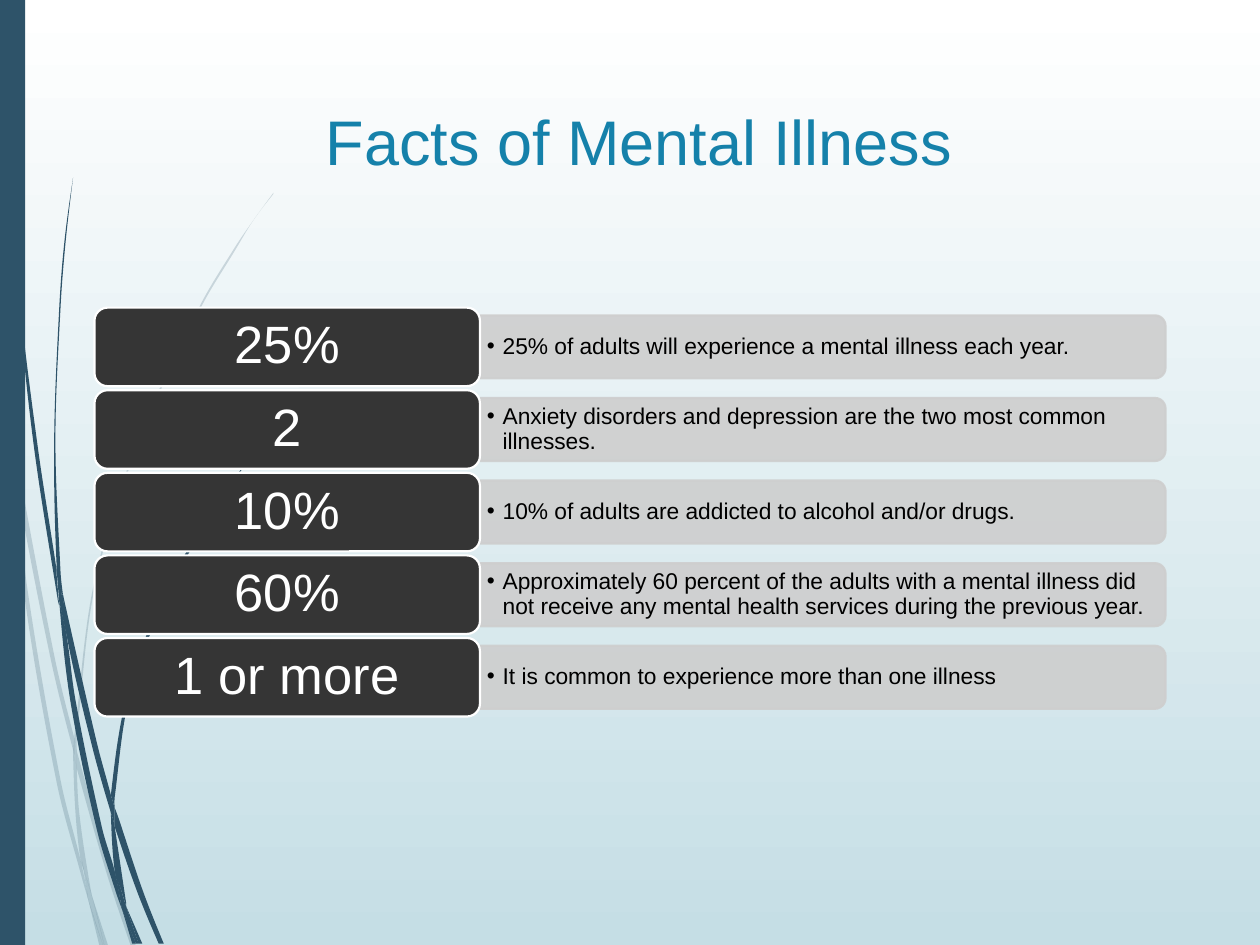
from math import dist
from lxml.etree import SubElement
from pptx import Presentation
from pptx.dml.color import RGBColor
from pptx.enum.shapes import MSO_SHAPE as Preset
from pptx.enum.text import MSO_ANCHOR as Anchor, PP_ALIGN as Align
from pptx.oxml.ns import qn
from pptx.util import Pt

TITLE = "Facts of Mental Illness"
FACTS = [
    ("25%", "25% of adults will experience a mental illness each year."),
    ("2", "Anxiety disorders and depression are the two most common illnesses."),
    ("10%", "10% of adults are addicted to alcohol and/or drugs."),
    ("60%", "Approximately 60 percent of the adults with a mental illness did "
            "not receive any mental health services during the previous year."),
    ("1 or more", "It is common to experience more than one illness"),
]

NAVY, TEAL, CHARCOAL, GREY = "2E5369", "1581AA", "353535", "CECECE"
WHITE, BLACK, MIST = "FFFFFF", "000000", "C5DEE5"
FONT = "Arial"

GRASS_UNIT = 0.72
PALE_GRASS = [
    [[(8, 350), (6, 322), (0, 282)], [(0, 299), (7, 344), (8, 350)]],
    [[(10, 345), (12, 376), (40, 522), (59, 599)], [(59, 586), (43, 520), (10, 345)]],
    [[(61, 610), (85, 694), (104, 751)], [(108, 751), (88, 692), (64, 607), (61, 596)]],
    [[(83, 751)], [(86, 751), (73, 711)]],
    [[(8, 350), (19, 470), (45, 621), (64, 693), (70, 714)],
     [(69, 707), (64, 683), (48, 619), (22, 469), (12, 376), (8, 350)]],
    [[(58, 599), (60, 646), (64, 683), (67, 692), (73, 711)],
     [(72, 706), (63, 646), (61, 610)], [(61, 608)]],
    [[(61, 596), (61, 584), (76, 462), (111, 349), (159, 245), (187, 198), (201, 175), (217, 154)],
     [(217, 153), (201, 175), (186, 197), (158, 244), (110, 348), (75, 461), (59, 584), (59, 586)]],
    [[(70, 714), (79, 751)], [(82, 751)]],
    [[(61, 608), (61, 610)], [(61, 596), (59, 586)], [(58, 599)]],
    [[(67, 692), (65, 683)], [(69, 707), (70, 714), (82, 751)], [(83, 751), (73, 711), (67, 692)]],
]
DARK_GRASS = [
    [[(2, 0), (3, 48), (5, 110), (14, 233), (27, 355), (46, 477), (47, 481)],
     [(45, 457), (45, 453), (30, 355), (15, 232), (6, 109), (4, 48), (3, 0)]],
    [[(50, 472), (53, 505), (73, 592), (88, 645)], [(88, 633), (88, 631), (77, 590), (50, 472)]],
    [[(91, 656), (109, 708), (126, 749)], [(130, 749), (113, 706), (94, 649), (91, 641)]],
    [[(47, 477), (56, 557), (77, 659), (92, 708), (97, 722)],
     [(96, 717), (91, 691), (81, 657), (60, 556), (53, 505), (47, 477)]],
    [[(50, 472), (48, 453), (44, 349), (48, 245), (52, 193), (58, 141)],
     [(58, 141), (51, 193), (47, 245), (43, 349), (45, 449), (49, 472)]],
    [[(110, 749)], [(113, 749), (100, 719)]],
    [[(47, 477), (53, 505)], [(50, 472), (49, 472)], [(45, 449), (45, 453)]],
    [[(91, 641), (91, 633), (103, 552), (131, 476), (169, 406), (191, 374), (203, 359), (216, 344)],
     [(215, 344), (203, 358), (191, 373), (168, 405), (129, 474), (101, 551), (88, 631)]],
    [[(97, 722), (105, 749)], [(108, 749)]],
    [[(88, 645), (91, 691), (96, 706), (100, 719)], [(100, 716), (91, 656)], [(90, 651)]],
    [[(88, 645), (90, 651), (91, 656)], [(91, 641), (88, 631)]],
    [[(96, 706), (91, 691)], [(96, 717), (97, 722), (108, 749)], [(110, 749), (100, 719), (96, 706)]],
]

TAG_LEFT, TAG_TOP, TAG_WIDTH, TAG_HEIGHT = 54, 175.8, 220.3, 44.9
ROW_PITCH = 47.2
BAR_WIDTH, BAR_HEIGHT = 391.7, 36
NOTE_WIDTH, NOTE_HEIGHT = 389.5, 32.4


def paint(color_format, value):
    color_format.rgb = RGBColor.from_string(value)


def style(shape, fill, line=None, opacity=100):
    shape.shadow.inherit = False
    shape.fill.solid()
    paint(shape.fill.fore_color, fill)
    if line:
        paint(shape.line.color, line)
        shape.line.width = Pt(1.25)
    else:
        shape.line.fill.background()
    if opacity < 100:
        for color in shape._element.spPr.iter(qn("a:srgbClr")):
            SubElement(color, qn("a:alpha"), val=str(opacity * 1000))


def write(box, text, size, color, align=Align.LEFT, anchor=Anchor.MIDDLE,
          insets=(7.2, 3.6), spacing=None, bullet_indent=None):
    frame = box.text_frame
    frame.word_wrap = True
    frame.vertical_anchor = anchor
    frame.margin_left = frame.margin_right = Pt(insets[0])
    frame.margin_top = frame.margin_bottom = Pt(insets[1])
    para = frame.paragraphs[0]
    para.alignment = align
    para.line_spacing = spacing
    if bullet_indent:
        properties = para._p.get_or_add_pPr()
        properties.set("marL", str(Pt(bullet_indent)))
        properties.set("indent", str(-Pt(bullet_indent)))
        SubElement(properties, qn("a:buFont"), typeface=FONT)
        SubElement(properties, qn("a:buChar"), char="•")
    span = para.add_run()
    span.text = text
    span.font.name = FONT
    span.font.size = Pt(size)
    paint(span.font.color, color)


def handle(knots, index, step):
    before, here, after = knots[index - step], knots[index], knots[index + step]
    reach = dist(here, after) / dist(before, after) / 3
    return tuple(h + (a - b) * reach for b, h, a in zip(before, here, after))


def halfway(start, end):
    return tuple((a + b) / 2 for a, b in zip(start, end))


def curve_handles(knots):
    last = len(knots) - 1
    if last < 2:
        return [None] * last
    pairs = []
    for i in range(last):
        leave = handle(knots, i, 1) if i > 0 else None
        arrive = handle(knots, i + 1, -1) if i + 1 < last else None
        pairs.append((leave or halfway(knots[i], arrive),
                      arrive or halfway(knots[i + 1], leave)))
    return pairs


def bend(blade, edges):
    bends = []
    for knots in edges:
        bends += [None, *curve_handles(knots)]
    lines = list(blade._element.iter(qn("a:lnTo")))
    for line, pair in zip(lines, bends[1:]):
        if pair:
            line.tag = qn("a:cubicBezTo")
            for place, (x, y) in enumerate(pair):
                point = SubElement(line, qn("a:pt"), x=str(Pt(x * GRASS_UNIT) - blade.left),
                                   y=str(Pt(y * GRASS_UNIT) - blade.top))
                line.insert(place, point)


def draw_grass(page, blades, opacity):
    group = page.shapes.add_group_shape()
    for edges in blades:
        outline = [(Pt(x * GRASS_UNIT), Pt(y * GRASS_UNIT)) for knots in edges for x, y in knots]
        builder = group.shapes.build_freeform(*outline[0])
        builder.add_line_segments(outline[1:], close=False)
        builder._add_close()
        blade = builder.convert_to_shape()
        bend(blade, edges)
        style(blade, NAVY, opacity=opacity)


def draw_fact(page, row, label, note):
    top = TAG_TOP + row * ROW_PITCH
    middle = top + TAG_HEIGHT / 2
    bar_left = TAG_LEFT + TAG_WIDTH
    bar = page.shapes.add_shape(
        Preset.ROUND_2_SAME_RECTANGLE,
        Pt(bar_left + (BAR_WIDTH - BAR_HEIGHT) / 2), Pt(middle - BAR_WIDTH / 2),
        Pt(BAR_HEIGHT), Pt(BAR_WIDTH))
    bar.rotation = 90
    style(bar, GREY, line=GREY, opacity=90)
    box = page.shapes.add_textbox(Pt(bar_left), Pt(middle - NOTE_HEIGHT / 2),
                                  Pt(NOTE_WIDTH), Pt(NOTE_HEIGHT))
    write(box, note, 13, BLACK, insets=(3.9, 2), spacing=0.9, bullet_indent=9)
    tag = page.shapes.add_shape(Preset.ROUNDED_RECTANGLE, Pt(TAG_LEFT), Pt(top),
                                Pt(TAG_WIDTH), Pt(TAG_HEIGHT))
    style(tag, CHARCOAL, line=WHITE)
    write(tag, label, 30, WHITE, align=Align.CENTER, insets=(10.8, 4), spacing=0.9)


def main():
    deck = Presentation()
    deck.slide_width, deck.slide_height = Pt(720), Pt(540)
    page = deck.slides.add_slide(deck.slide_layouts[6])
    backdrop = page.background.fill
    backdrop.gradient()
    backdrop.gradient_angle = 270
    for stop, color in zip(backdrop.gradient_stops, (WHITE, MIST)):
        paint(stop.color, color)
    draw_grass(page, PALE_GRASS, 20)
    draw_grass(page, DARK_GRASS, 100)
    side_band = page.shapes.add_shape(Preset.RECTANGLE, 0, 0, Pt(14.4), deck.slide_height)
    style(side_band, NAVY)
    title = page.shapes.add_textbox(Pt(18.2), Pt(55), Pt(694), Pt(75.6))
    write(title, TITLE, 36, TEAL, align=Align.CENTER, anchor=Anchor.TOP)
    for row, (label, note) in enumerate(FACTS):
        draw_fact(page, row, label, note)
    deck.save("out.pptx")


if __name__ == "__main__":
    main()
